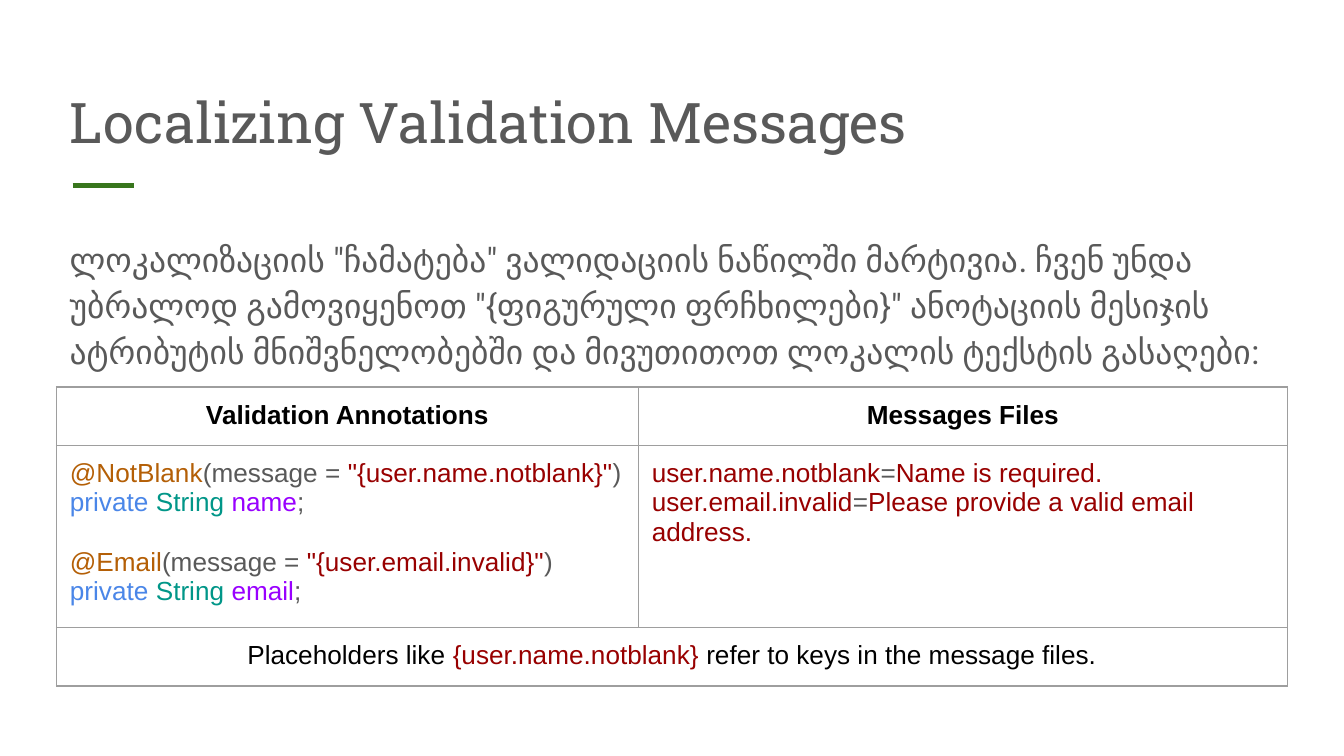
"""Build a slide on localizing validation messages."""
from typing import NamedTuple

from lxml import etree
from pptx import Presentation
from pptx import util as u
from pptx.dml import color
from pptx.enum import shapes, text
from pptx.oxml import ns

GREY, BLACK, RED = "595959", "000000", "980000"
ORANGE, BLUE, TEAL, PURPLE = "B45F06", "4A86E8", "009688", "9900FF"
GREEN, EDGE = "38761D", "9E9E9E"
LEFT, WIDTH, INSET = 0.42, 9.15, 0.1


class Run(NamedTuple):
    text: str
    hue: str


class Line(NamedTuple):
    runs: list[Run]
    gap: float = 0


class Cell(NamedTuple):
    row: int
    col: int
    lines: list[Line]
    bold: bool = False
    align: text.PP_ALIGN = text.PP_ALIGN.LEFT


class Block(NamedTuple):
    text: str
    top: float
    height: float
    font: str
    size: float
    anchor: text.MSO_ANCHOR
    pitch: float = 1
    after: float = 0


def rgb(hue: str) -> color.RGBColor:
    return color.RGBColor.from_string(hue)


def head(label: str, col: int) -> Cell:
    return Cell(0, col, [Line([Run(label, BLACK)])], True, text.PP_ALIGN.CENTER)


def field(rule: str, key: str, name: str, gap: float = 0) -> list[Line]:
    return [
        Line([Run(rule, ORANGE), Run("(message = ", GREY),
              Run(f'"{{{key}}}"', RED), Run(")", GREY)], gap),
        Line([Run("private ", BLUE), Run("String ", TEAL),
              Run(name, PURPLE), Run(";", GREY)]),
    ]


def entry(key: str, value: str) -> Line:
    return Line([Run(key, RED), Run("=", GREY), Run(value, RED)])


BLOCKS = [
    Block("Localizing Validation Messages", 0.5, 0.75, "Roboto Slab", 30,
          text.MSO_ANCHOR.BOTTOM),
    Block('ლოკალიზაციის "ჩამატება" ვალიდაციის ნაწილში მარტივია. ჩვენ უნდა '
          'უბრალოდ გამოვიყენოთ "{ფიგურული ფრჩხილები}" ანოტაციის მესიჯის '
          'ატრიბუტის მნიშვნელობებში და მივუთითოთ ლოკალის ტექსტის გასაღები:',
          1.63, 3.37, "Roboto", 18, text.MSO_ANCHOR.TOP, 1.15, 12),
]
COLS = [4.33, 4.83]
ROWS = [0.34, 1.06, 0.34]
CELLS = [
    head("Validation Annotations", 0),
    head("Messages Files", 1),
    Cell(1, 0, field("@NotBlank", "user.name.notblank", "name")
         + field("@Email", "user.email.invalid", "email", 16)),
    Cell(1, 1, [
        entry("user.name.notblank", "Name is required."),
        entry("user.email.invalid", "Please provide a valid email address."),
    ]),
    Cell(2, 0, [Line([
        Run("Placeholders like ", BLACK),
        Run("{user.name.notblank}", RED),
        Run(" refer to keys in the message files.", BLACK),
    ])], align=text.PP_ALIGN.CENTER),
]


def pad(box) -> None:
    box.margin_left = box.margin_right = u.Inches(INSET)
    box.margin_top = box.margin_bottom = u.Inches(INSET)


def draw_block(slide, block: Block) -> None:
    box = slide.shapes.add_textbox(u.Inches(LEFT), u.Inches(block.top),
                                   u.Inches(WIDTH), u.Inches(block.height))
    frame = box.text_frame
    frame.word_wrap = True
    frame.vertical_anchor = block.anchor
    pad(frame)
    para = frame.paragraphs[0]
    para.text = block.text
    para.line_spacing = block.pitch
    para.space_after = u.Pt(block.after)
    para.font.name = block.font
    para.font.size = u.Pt(block.size)
    para.font.color.rgb = rgb(GREY)


def draw_rule(slide) -> None:
    rule = slide.shapes.add_connector(
        shapes.MSO_CONNECTOR.STRAIGHT, u.Inches(0.54), u.Inches(1.38),
        u.Inches(1), u.Inches(1.38))
    rule.line.color.rgb = rgb(GREEN)
    rule.line.width = u.Pt(3)
    etree.SubElement(rule._element.spPr, ns.qn("a:effectLst"))


def edge(cell) -> None:
    props = cell._tc.get_or_add_tcPr()
    for side in ("a:lnL", "a:lnR", "a:lnT", "a:lnB"):
        line = etree.SubElement(props, ns.qn(side), w=str(u.Pt(0.75)))
        fill = etree.SubElement(line, ns.qn("a:solidFill"))
        etree.SubElement(fill, ns.qn("a:srgbClr"), val=EDGE)
    cell.fill.background()


def fill_cell(table, item: Cell) -> None:
    frame = table.cell(item.row, item.col).text_frame
    for i, line in enumerate(item.lines):
        para = frame.add_paragraph() if i else frame.paragraphs[0]
        para.alignment = item.align
        para.space_before = u.Pt(line.gap)
        para.font.name = "Arial"
        para.font.size = u.Pt(14)
        para.font.bold = item.bold
        for part in line.runs:
            run = para.add_run()
            run.text = part.text
            run.font.color.rgb = rgb(part.hue)


def draw_table(slide) -> None:
    table = slide.shapes.add_table(
        len(ROWS), len(COLS), u.Inches(LEFT), u.Inches(2.88),
        u.Inches(sum(COLS)), u.Inches(sum(ROWS))).table
    table.first_row = table.horz_banding = False
    for col, width in zip(table.columns, COLS):
        col.width = u.Inches(width)
    for row, height in zip(table.rows, ROWS):
        row.height = u.Inches(height)
    table.cell(2, 0).merge(table.cell(2, 1))
    for cell in table.iter_cells():
        pad(cell)
        edge(cell)
    for item in CELLS:
        fill_cell(table, item)


def main() -> None:
    deck = Presentation()
    deck.slide_width = u.Inches(10)
    deck.slide_height = u.Inches(10 * 9 / 16)
    slide = deck.slides.add_slide(deck.slide_layouts[6])
    draw_rule(slide)
    for block in BLOCKS:
        draw_block(slide, block)
    draw_table(slide)
    deck.save("out.pptx")


if __name__ == "__main__":
    main()
